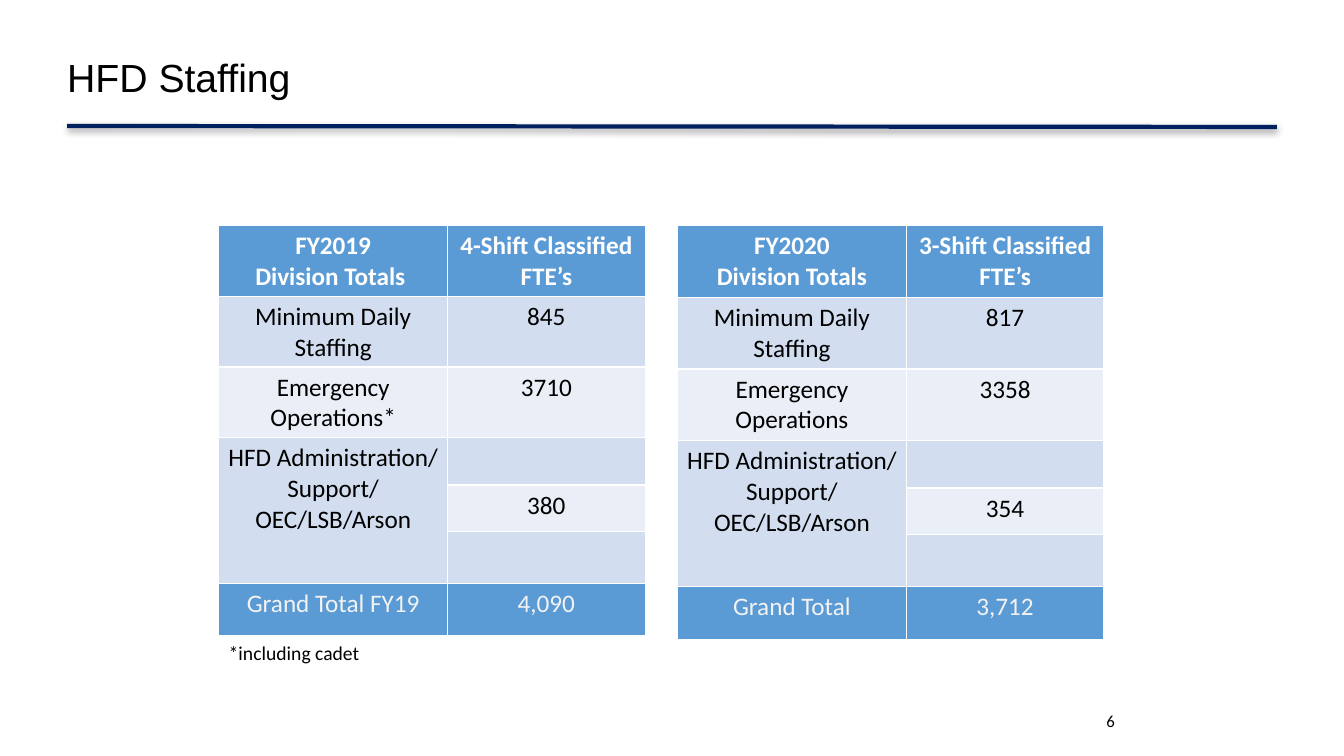
from lxml.etree import SubElement
from pptx import Presentation
from pptx.dml.color import RGBColor
from pptx.enum.shapes import MSO_CONNECTOR
from pptx.enum.text import MSO_ANCHOR, MSO_AUTO_SIZE, PP_ALIGN
from pptx.oxml.ns import qn
from pptx.util import Pt

COLORS = {
    "navy": "002060", "head": "5B9BD5", "dark": "D2DEEF", "light": "EAEFF7",
    "black": "000000", "white": "FFFFFF", "pale": "F2F2F2",
}
WIDTHS = [163.44, 141.12]
HEIGHTS = [37.44, 37.44, 37.44, 33.84, 33.12, 37.44, 37.44]
FILLS = ["head", "dark", "light", "dark", "light", "dark", "head"]
INKS = ["white"] + ["black"] * 5 + ["pale"]
ADMIN = "HFD Administration/ Support/\nOEC/LSB/Arson"


class Deck:
    """Hold the text style and the current slide."""

    def __init__(self, font):
        self.font = font
        self.prs = Presentation()
        self.prs.slide_width, self.prs.slide_height = Pt(960), Pt(540)
        self.slide = self.prs.slides.add_slide(self.prs.slide_layouts[5])

    def style(self, para, size, ink="black", bold=False, font=None, align=PP_ALIGN.LEFT):
        para.alignment = align
        para.font.name = font or self.font
        para.font.size = Pt(size)
        para.font.bold = bold
        para.font.color.rgb = RGBColor.from_string(COLORS[ink])

    def title(self, text, left, top, width, height):
        shape = self.slide.shapes.title
        shape.left, shape.top = Pt(left), Pt(top)
        shape.width, shape.height = Pt(width), Pt(height)
        frame = shape.text_frame
        frame.text = text
        frame.auto_size = MSO_AUTO_SIZE.NONE
        frame.vertical_anchor = MSO_ANCHOR.MIDDLE
        frame.margin_left = frame.margin_right = frame.margin_top = frame.margin_bottom = 0
        para = frame.paragraphs[0]
        para.line_spacing = 0.9
        self.style(para, 28, font="Arial")

    def rule(self, x1, y1, x2, y2):
        line = self.slide.shapes.add_connector(
            MSO_CONNECTOR.STRAIGHT, Pt(x1), Pt(y1), Pt(x2), Pt(y2))
        line.line.width = Pt(3)
        line.line.color.rgb = RGBColor.from_string(COLORS["navy"])
        effects = SubElement(line._element.spPr, qn("a:effectLst"))
        shadow = SubElement(effects, qn("a:outerShdw"), blurRad=str(Pt(5)),
                            dist=str(Pt(1.6)), dir="5400000", rotWithShape="0")
        color = SubElement(shadow, qn("a:srgbClr"), val=COLORS["black"])
        SubElement(color, qn("a:alpha"), val="38000")

    def text(self, text, left, top, width, height, size, align=PP_ALIGN.LEFT, wrap=True):
        box = self.slide.shapes.add_textbox(Pt(left), Pt(top), Pt(width), Pt(height))
        frame = box.text_frame
        frame.text = text
        frame.word_wrap = wrap
        if not wrap:
            frame.auto_size = MSO_AUTO_SIZE.SHAPE_TO_FIT_TEXT
        self.style(frame.paragraphs[0], size, align=align)

    def table(self, rows, left, top):
        shape = self.slide.shapes.add_table(
            len(rows), len(WIDTHS), Pt(left), Pt(top), Pt(sum(WIDTHS)), Pt(293))
        table = shape.table
        for col, width in zip(table.columns, WIDTHS):
            col.width = Pt(width)
        for row, height in zip(table.rows, HEIGHTS):
            row.height = Pt(height)
        shape.height = Pt(293)
        for r, row in enumerate(rows):
            for c, text in enumerate(row):
                self.cell(table.cell(r, c), text, FILLS[r], INKS[r], r == 0)
        table.cell(3, 0).merge(table.cell(5, 0))

    def cell(self, cell, text, fill, ink, bold):
        cell.fill.solid()
        cell.fill.fore_color.rgb = RGBColor.from_string(COLORS[fill])
        cell.margin_left = cell.margin_right = Pt(4.5)
        cell.margin_top = cell.margin_bottom = Pt(3.6)
        cell.text = text
        for para in cell.text_frame.paragraphs:
            self.style(para, 18, ink, bold, align=PP_ALIGN.CENTER)


def staff(year, shift, daily, crew, count, admin, total, amount):
    """Return the rows of one year's staffing table."""
    return [
        (year, f"{shift}-Shift Classified FTE’s"),
        ("Minimum Daily Staffing", daily),
        (crew, count),
        (ADMIN, ""),
        ("", admin),
        ("", ""),
        (total, amount),
    ]


def main():
    deck = Deck("Calibri")
    deck.rule(48, 90, 912, 90.7)
    deck.title("HFD Staffing", 48, 24, 659, 66)
    deck.table(staff("FY2020\nDivision Totals", 3, "817", "Emergency Operations",
                     "3358", "354", "Grand Total", "3,712"), 484, 161.3)
    deck.text("6", 636, 504, 167.5, 28.8, 12, PP_ALIGN.RIGHT)
    deck.table(staff("FY2019\nDivision Totals ", 4, "845", "Emergency Operations*",
                     "3710", "380", "Grand Total FY19", "4,090"), 156.3, 161.3)
    deck.text("*including cadet", 156.3, 454.3, 112.3, 24.2, 14, wrap=False)
    deck.prs.save("out.pptx")


if __name__ == "__main__":
    main()
